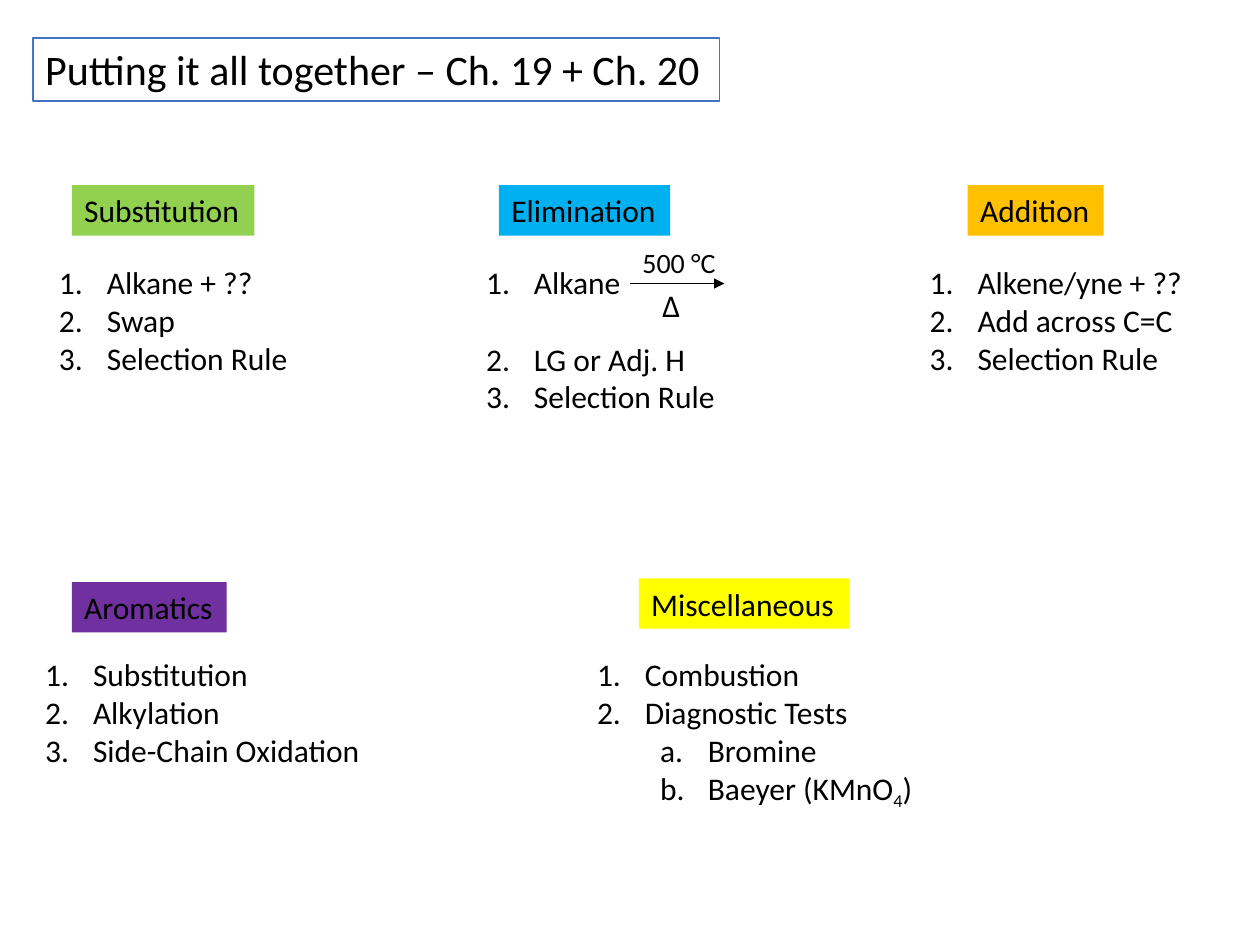
from dataclasses import dataclass

from lxml import etree
from pptx import Presentation
from pptx.dml.color import RGBColor
from pptx.enum.shapes import MSO_CONNECTOR
from pptx.enum.text import MSO_ANCHOR, MSO_AUTO_SIZE
from pptx.oxml.ns import qn
from pptx.shapes.autoshape import Shape
from pptx.text.text import _Paragraph
from pptx.util import Pt

STRAIGHT = MSO_CONNECTOR.STRAIGHT
TOP = MSO_ANCHOR.TOP
FIT_SHAPE = MSO_AUTO_SIZE.SHAPE_TO_FIT_TEXT

EMU_PER_PX = 9144
SLIDE_WIDTH, SLIDE_HEIGHT = 1000, 750
HANGING, LEVEL_STEP = 38, 50
HEADING_HEIGHT = 40
FONT_NAME = "Calibri"
BODY_SIZE = 18
BLANK_LAYOUT = 6

BLACK = RGBColor(0x00, 0x00, 0x00)
WHITE = RGBColor(0xFF, 0xFF, 0xFF)
BLUE = RGBColor(0x44, 0x72, 0xC4)
GREEN = RGBColor(0x92, 0xD0, 0x50)
SKY = RGBColor(0x00, 0xB0, 0xF0)
ORANGE = RGBColor(0xFF, 0xC0, 0x00)
PURPLE = RGBColor(0x70, 0x30, 0xA0)
YELLOW = RGBColor(0xFF, 0xFF, 0x00)


@dataclass(frozen=True)
class Box:
    left: int
    top: int
    width: int
    height: int


@dataclass(frozen=True)
class Item:
    text: str
    level: int = 0
    space_before: int = 0
    subscript: str = ""
    ending: str = ""


@dataclass(frozen=True)
class Topic:
    heading: str
    color: RGBColor
    heading_left: int
    heading_top: int
    heading_width: int
    list_box: Box
    items: tuple[Item, ...]


RULE = Item("Selection Rule")
TOPICS = (
    Topic("Substitution", GREEN, 57, 147, 145, Box(37, 204, 203, 101),
          (Item("Alkane + ??"), Item("Swap"), RULE)),
    Topic("Elimination", SKY, 396, 147, 136, Box(376, 204, 203, 131),
          (Item("Alkane"), Item("LG or Adj. H", space_before=22), RULE)),
    Topic("Addition", ORANGE, 768, 147, 108, Box(728, 204, 222, 101),
          (Item("Alkene/yne + ??"), Item("Add across C=C"), RULE)),
    Topic("Aromatics", PURPLE, 57, 462, 123, Box(26, 515, 272, 101),
          (Item("Substitution"), Item("Alkylation"), Item("Side-Chain Oxidation"))),
    Topic("Miscellaneous", YELLOW, 507, 459, 167, Box(464, 515, 274, 131),
          (Item("Combustion"), Item("Diagnostic Tests"), Item("Bromine", level=1),
           Item("Baeyer (KMnO", level=1, subscript="4", ending=")"))),
)


def px(length: int) -> int:
    return length * EMU_PER_PX


def add_run(paragraph: _Paragraph, text: str, size: int = BODY_SIZE, baseline: int = 0) -> None:
    run = paragraph.add_run()
    run.text = text
    for name, value in {"name": FONT_NAME, "size": Pt(size)}.items():
        setattr(run.font, name, value)
    run.font.color.rgb = BLACK
    if baseline:
        run.font._element.set("baseline", str(baseline))


def add_text_box(shapes, box: Box) -> Shape:
    shape = shapes.add_textbox(px(box.left), px(box.top), px(box.width), px(box.height))
    frame_format = {"word_wrap": False, "auto_size": FIT_SHAPE, "vertical_anchor": TOP}
    for name, value in frame_format.items():
        setattr(shape.text_frame, name, value)
    return shape


def add_label(shapes, box: Box, text: str, size: int = BODY_SIZE,
              fill: RGBColor | None = None) -> Shape:
    shape = add_text_box(shapes, box)
    add_run(shape.text_frame.paragraphs[0], text, size)
    if fill is not None:
        shape.fill.solid()
        shape.fill.fore_color.rgb = fill
    return shape


def add_item(paragraph: _Paragraph, item: Item) -> None:
    paragraph.level = item.level
    if item.space_before:
        paragraph.space_before = Pt(item.space_before)
    properties = paragraph._p.get_or_add_pPr()
    properties.set("marL", str(px(HANGING + LEVEL_STEP * item.level)))
    properties.set("indent", str(px(-HANGING)))
    numbering = etree.SubElement(properties, qn("a:buAutoNum"))
    numbering.set("type", "alphaLcPeriod" if item.level else "arabicPeriod")
    add_run(paragraph, item.text)
    if item.subscript:
        add_run(paragraph, item.subscript, baseline=-25000)
        add_run(paragraph, item.ending)


def add_topic(shapes, topic: Topic) -> None:
    heading_box = Box(topic.heading_left, topic.heading_top, topic.heading_width, HEADING_HEIGHT)
    add_label(shapes, heading_box, topic.heading, fill=topic.color)
    frame = add_text_box(shapes, topic.list_box).text_frame
    for index, item in enumerate(topic.items):
        add_item(frame.add_paragraph() if index else frame.paragraphs[0], item)


def add_reaction_arrow(shapes) -> None:
    group_shapes = shapes.add_group_shape().shapes
    arrow = group_shapes.add_connector(STRAIGHT, px(500), px(225), px(575), px(225))
    arrow.line.color.rgb = BLACK
    arrow.line.width = Pt(1)
    etree.SubElement(arrow.line._get_or_add_ln(), qn("a:tailEnd")).set("type", "triangle")
    etree.SubElement(arrow._element.spPr, qn("a:effectLst"))
    add_label(group_shapes, Box(500, 190, 79, 37), "500 °C", size=16)
    add_label(group_shapes, Box(516, 222, 34, 40), "Δ")


def main() -> None:
    presentation = Presentation()
    presentation.slide_width = px(SLIDE_WIDTH)
    presentation.slide_height = px(SLIDE_HEIGHT)
    slide = presentation.slides.add_slide(presentation.slide_layouts[BLANK_LAYOUT])
    title = add_label(slide.shapes, Box(26, 30, 545, 50),
                      "Putting it all together – Ch. 19 + Ch. 20", size=24, fill=WHITE)
    title.line.color.rgb = BLUE
    title.line.width = Pt(1)
    for topic in TOPICS:
        add_topic(slide.shapes, topic)
    add_reaction_arrow(slide.shapes)
    presentation.save("out.pptx")


if __name__ == "__main__":
    main()
